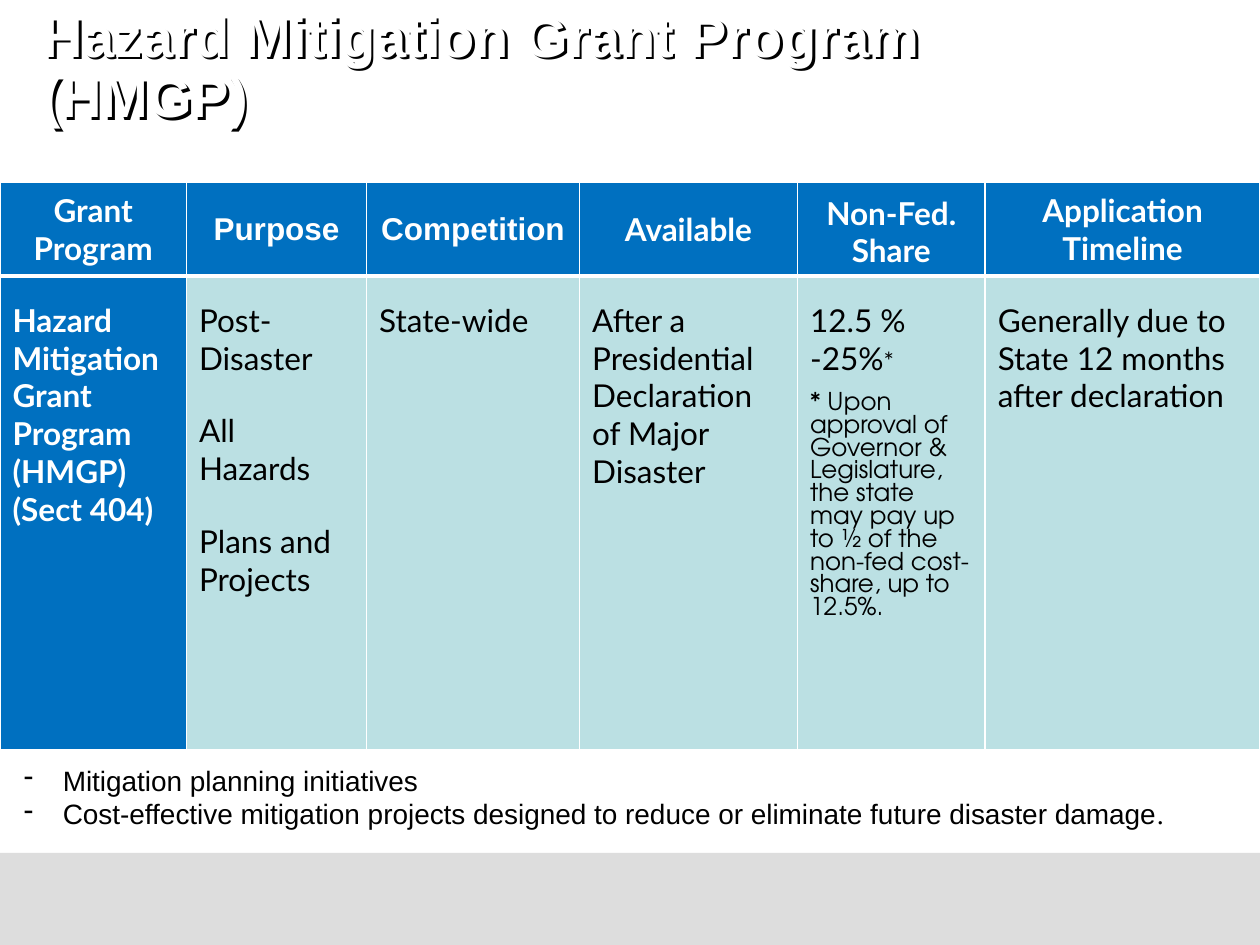
import pptx
import pptx.dml.color
import pptx.enum.shapes
import pptx.enum.text
import pptx.oxml
import pptx.oxml.ns
import pptx.util

RGBColor = pptx.dml.color.RGBColor
WHITE = RGBColor(0xFF, 0xFF, 0xFF)
BLACK = RGBColor(0, 0, 0)
BLUE = RGBColor(0x00, 0x70, 0xC0)
TEAL = RGBColor(0xBB, 0xE0, 0xE3)
GREY = RGBColor(0xDD, 0xDD, 0xDD)

COLUMNS, ROWS = 100, 75
ALIGN = pptx.enum.text.PP_ALIGN
ANCHOR = pptx.enum.text.MSO_ANCHOR


def xml(markup):
    """Parse markup whose first tag is an opening tag, not a self-closing one."""
    declaration = pptx.oxml.ns.nsdecls("a")
    return pptx.oxml.parse_xml(markup.replace(">", f" {declaration}>", 1))


def write(paragraph, text, font="Lato", size=18, color=BLACK, bold=False,
          align=None, before=None, spacing=None):
    """Add one run to the paragraph and set any paragraph format given."""
    run = paragraph.add_run()
    run.text = text
    run.font.name = font
    run.font.size = pptx.util.Pt(size)
    run.font.bold = bold
    run.font.color.rgb = color
    if align is not None:
        paragraph.alignment = align
    if before is not None:
        paragraph.space_before = pptx.util.Pt(before)
    if spacing is not None:
        paragraph.line_spacing = spacing


class GridSlide:
    """A slide measured in grid columns and rows of a tenth of an inch."""

    def __init__(self, presentation):
        self.width = presentation.slide_width
        self.height = presentation.slide_height
        self.slide = presentation.slides.add_slide(presentation.slide_layouts[6])
        self.shapes = self.slide.shapes

    def across(self, columns):
        return round(self.width * columns / COLUMNS)

    def down(self, rows):
        return round(self.height * rows / ROWS)

    def area(self, left, top, width, height):
        return (self.across(left), self.down(top),
                self.across(width), self.down(height))

    def band(self, *area, color):
        band = self.shapes.add_shape(
            pptx.enum.shapes.MSO_SHAPE.RECTANGLE, *self.area(*area))
        band.shadow.inherit = False
        band.fill.solid()
        band.fill.fore_color.rgb = color
        band.line.fill.background()

    def text_box(self, *area):
        box = self.shapes.add_textbox(*self.area(*area))
        box.text_frame.word_wrap = True
        return box

    def title(self, text, *area):
        box = self.text_box(*area)
        frame = box.text_frame
        frame.vertical_anchor = ANCHOR.MIDDLE
        frame.margin_right = self.across(2)
        write(frame.paragraphs[0], text, font="Arial", size=32, color=WHITE,
              bold=True, spacing=0.9)
        box._element.spPr.append(xml(
            '<a:effectLst><a:outerShdw blurRad="0" dist="27000" dir="2700000" '
            'algn="tl"><a:srgbClr val="000000"/></a:outerShdw></a:effectLst>'))

    def dash_list(self, items, *area):
        """Each item is a list of (text, font) runs."""
        frame = self.text_box(*area).text_frame
        for index, runs in enumerate(items):
            paragraph = frame.add_paragraph() if index else frame.paragraphs[0]
            properties = paragraph._p.get_or_add_pPr()
            indent = self.across(3.1)
            properties.set("marL", str(indent))
            properties.set("indent", str(-indent))
            properties.append(xml('<a:buChar char="-"></a:buChar>'))
            for text, font in runs:
                write(paragraph, text, font=font, size=16)

    def table(self, *area, widths, heights):
        frame = self.shapes.add_table(len(heights), len(widths), *self.area(*area))
        for column, width in zip(frame.table.columns, widths):
            column.width = self.across(width)
        for row, height in zip(frame.table.rows, heights):
            row.height = self.down(height)
        return frame.table

    def cell(self, cell, paragraphs, fill, anchor, borders, padding=None):
        """Fill a cell; paragraphs are lists of (text, format) runs."""
        for side, points in borders.items():
            cell._tc.get_or_add_tcPr().append(xml(
                f'<a:{side} w="{pptx.util.Pt(points)}"><a:solidFill>'
                f'<a:srgbClr val="{WHITE}"/></a:solidFill></a:{side}>'))
        cell.fill.solid()
        cell.fill.fore_color.rgb = fill
        cell.vertical_anchor = anchor
        if padding is not None:
            cell.margin_top = cell.margin_bottom = self.down(padding)
        frame = cell.text_frame
        for index, runs in enumerate(paragraphs):
            paragraph = frame.add_paragraph() if index else frame.paragraphs[0]
            for text, style in runs:
                write(paragraph, text, **style)


HEADINGS = [
    ("Grant Program", "Lato", ANCHOR.MIDDLE),
    ("Purpose", "Arial", ANCHOR.MIDDLE),
    ("Competition", "Arial", ANCHOR.MIDDLE),
    ("Available", "Lato", ANCHOR.MIDDLE),
    ("Non-Fed. Share", "Lato", ANCHOR.BOTTOM),
    ("Application Timeline", "Lato", ANCHOR.MIDDLE),
]
PROGRAM = dict(color=WHITE, bold=True)
GAP = dict(before=20)
FOOTNOTE = dict(font="TeX Gyre Adventor", size=14, before=9,
                spacing=pptx.util.Pt(13))
DETAILS = [
    [[("Hazard Mitigation Grant Program (HMGP)", PROGRAM)],
     [("(Sect 404)", PROGRAM)]],
    [[("Post-Disaster", {})], [("All Hazards", GAP)],
     [("Plans and Projects", GAP)]],
    [[("State-wide", {})]],
    [[("After a Presidential Declaration of Major Disaster", {})]],
    [[("12.5 % -25%", {}), ("*", dict(size=14))],
     [("* Upon approval of Governor & Legislature, the state may pay up to "
       "½ of the non-fed cost-share, up to 12.5%.", FOOTNOTE)]],
    [[("Generally due to State 12 months after declaration", {})]],
]
INITIATIVES = [
    [("Mitigation planning initiatives", "Arial")],
    [("Cost-effective mitigation projects designed to reduce or eliminate "
      "future disaster damage", "Arial"), (".", "Times New Roman")],
]


def main():
    presentation = pptx.Presentation()
    presentation.slide_width = pptx.util.Inches(10)
    presentation.slide_height = pptx.util.Inches(7.5)
    page = GridSlide(presentation)

    page.band(0, 67.7, 100, 7.3, color=GREY)
    grants = page.table(0, 14.5, 100, 45, heights=[7.4, 37.6],
                        widths=[14.8, 14.3, 16.9, 17.3, 14.9, 21.8])
    for column, (heading, font, anchor) in enumerate(HEADINGS):
        style = dict(font=font, color=WHITE, bold=True, align=ALIGN.CENTER)
        page.cell(grants.cell(0, column), [[(heading, style)]], BLUE, anchor,
                  dict(lnL=1, lnR=1, lnT=1, lnB=3))
    for column, paragraphs in enumerate(DETAILS):
        page.cell(grants.cell(1, column), paragraphs, TEAL if column else BLUE,
                  ANCHOR.TOP, dict(lnL=1, lnR=1, lnT=3, lnB=1), padding=2)

    page.title("Hazard Mitigation Grant Program (HMGP)", 2.4, 2, 89.2, 7)
    page.dash_list(INITIATIVES, 0.9, 60.1, 99.1, 6.4)
    presentation.save("out.pptx")


if __name__ == "__main__":
    main()
